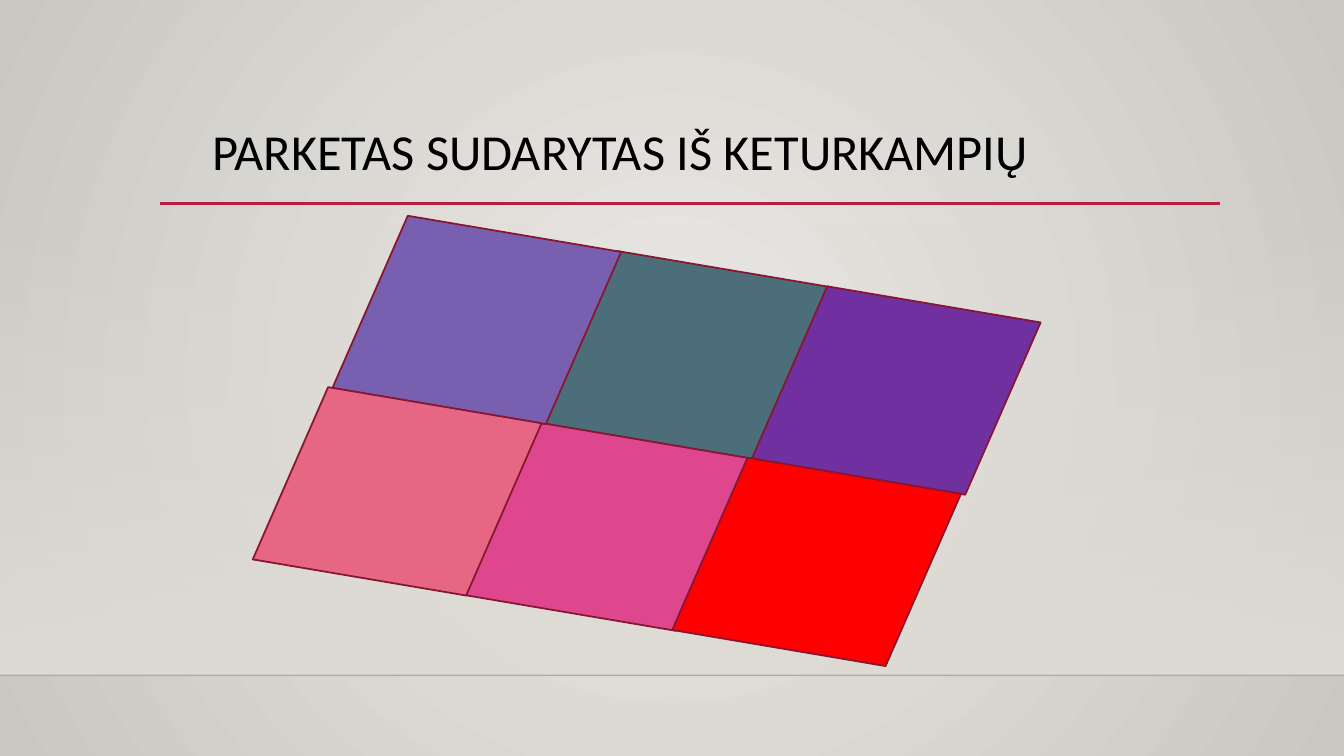
from dataclasses import dataclass

from lxml import etree
from pptx import Presentation
from pptx.dml.color import RGBColor
from pptx.dml.fill import FillFormat
from pptx.enum.shapes import MSO_CONNECTOR as Connector, MSO_SHAPE as Shape
from pptx.enum.text import MSO_ANCHOR as Anchor, PP_ALIGN as Align
from pptx.oxml.ns import qn
from pptx.shapes.group import GroupShape
from pptx.slide import Slide
from pptx.util import Pt

GLOW = RGBColor(0xEC, 0xEA, 0xE7)
EDGE = RGBColor(0xCA, 0xC7, 0xC1)
WALL = RGBColor(0xDF, 0xDB, 0xD5)
FLOOR_LINE = RGBColor(0x00, 0x00, 0x01)
CRIMSON = RGBColor(0xB7, 0x1E, 0x42)
TILE_LINE = RGBColor(0x87, 0x16, 0x31)
BLACK = RGBColor(0x00, 0x00, 0x00)
TEAL = RGBColor(0x4C, 0x6E, 0x7A)
PINK = RGBColor(0xDE, 0x47, 0x8E)
PURPLE = RGBColor(0x70, 0x30, 0xA0)
RED = RGBColor(0xFF, 0x00, 0x00)
LAVENDER = RGBColor(0x79, 0x5F, 0xAF)
ROSE = RGBColor(0xE6, 0x66, 0x84)

SLIDE_WIDTH, SLIDE_HEIGHT = 960, 540
WALL_TOP, FLOOR_Y = 159, 482.4
TILE_WIDTH, TILE_HEIGHT, TILE_TURN = 187.2, 130.3, 9.6
FIRST_LEFT, FIRST_TOP = 247, 163.4
COLUMN_STEP = (149.8, 25.2)
ROW_STEP = (-56.9, 122.4)


@dataclass(frozen=True)
class Tile:
    row: int
    column: int
    color: RGBColor


@dataclass(frozen=True)
class Rule:
    left: float
    right: float
    y: float
    weight: float
    color: RGBColor
    opacity: int = 100


TILES = [
    Tile(0, 1, TEAL),
    Tile(1, 1, PINK),
    Tile(0, 2, PURPLE),
    Tile(1, 2, RED),
    Tile(0, 0, LAVENDER),
    Tile(1, 0, ROSE),
]
RULES = [
    Rule(0, SLIDE_WIDTH, FLOOR_Y, 1, FLOOR_LINE, opacity=20),
    Rule(114.5, 871.2, 145.4, 2.5, CRIMSON),
]


def set_opacity(color: etree._Element, percent: int) -> None:
    etree.SubElement(color, qn("a:alpha"), val=str(percent * 1000))


def set_gradient(fill: FillFormat, start: RGBColor, end: RGBColor) -> None:
    fill.gradient()
    for stop, color, position in zip(fill.gradient_stops, (start, end), (0, 1)):
        stop.color.rgb = color
        stop.position = position


def paint_background(slide: Slide) -> None:
    """Fill the slide with a glow that darkens from the centre outwards."""
    set_gradient(slide.background.fill, GLOW, EDGE)
    gradient = slide.element.find(".//" + qn("a:gradFill"))
    gradient.remove(gradient.find(qn("a:lin")))
    glow = etree.SubElement(gradient, qn("a:path"), path="circle")
    etree.SubElement(glow, qn("a:fillToRect"), l="50000", t="50000", r="50000", b="50000")


def add_wall(slide: Slide) -> None:
    """Add the band that fades in from clear to solid down to the floor."""
    wall = slide.shapes.add_shape(
        Shape.RECTANGLE, 0, Pt(WALL_TOP), Pt(SLIDE_WIDTH), Pt(FLOOR_Y - WALL_TOP))
    wall.shadow.inherit = False
    wall.line.fill.background()
    set_gradient(wall.fill, WALL, WALL)
    wall.fill.gradient_angle = 270
    set_opacity(wall.element.find(".//" + qn("a:gs"))[0], 0)


def add_rule(slide: Slide, rule: Rule) -> None:
    line = slide.shapes.add_connector(
        Connector.STRAIGHT, Pt(rule.left), Pt(rule.y), Pt(rule.right), Pt(rule.y))
    line.line.width = Pt(rule.weight)
    line.line.color.rgb = rule.color
    properties = line.element.spPr
    if rule.opacity < 100:
        set_opacity(properties.find(".//" + qn("a:srgbClr")), rule.opacity)
    etree.SubElement(properties, qn("a:effectLst"))


def add_title(slide: Slide) -> None:
    title = slide.shapes.add_textbox(Pt(144.7), Pt(87.1), Pt(828), Pt(104.4))
    frame = title.text_frame
    frame.word_wrap = True
    frame.vertical_anchor = Anchor.TOP
    heading = frame.paragraphs[0]
    heading.alignment = Align.LEFT
    heading.line_spacing = 0.9
    run = heading.add_run()
    run.text = "PARKETAS SUDARYTAS IŠ KETURKAMPIŲ"
    run.font.name = "Calibri"
    run.font.size = Pt(36)
    run.font.color.rgb = BLACK


def add_tile(parquet: GroupShape, tile: Tile) -> None:
    left = FIRST_LEFT + tile.column * COLUMN_STEP[0] + tile.row * ROW_STEP[0]
    top = FIRST_TOP + tile.column * COLUMN_STEP[1] + tile.row * ROW_STEP[1]
    shape = parquet.shapes.add_shape(
        Shape.PARALLELOGRAM, Pt(left), Pt(top), Pt(TILE_WIDTH), Pt(TILE_HEIGHT))
    shape.rotation = TILE_TURN
    shape.shadow.inherit = False
    shape.fill.solid()
    shape.fill.fore_color.rgb = tile.color
    shape.line.color.rgb = TILE_LINE
    shape.line.width = Pt(1.25)


def main() -> None:
    presentation = Presentation()
    presentation.slide_width = Pt(SLIDE_WIDTH)
    presentation.slide_height = Pt(SLIDE_HEIGHT)
    slide = presentation.slides.add_slide(presentation.slide_layouts[6])
    paint_background(slide)
    add_wall(slide)
    for rule in RULES:
        add_rule(slide, rule)
    add_title(slide)
    parquet = slide.shapes.add_group_shape()
    for tile in TILES:
        add_tile(parquet, tile)
    presentation.save("out.pptx")


if __name__ == "__main__":
    main()
